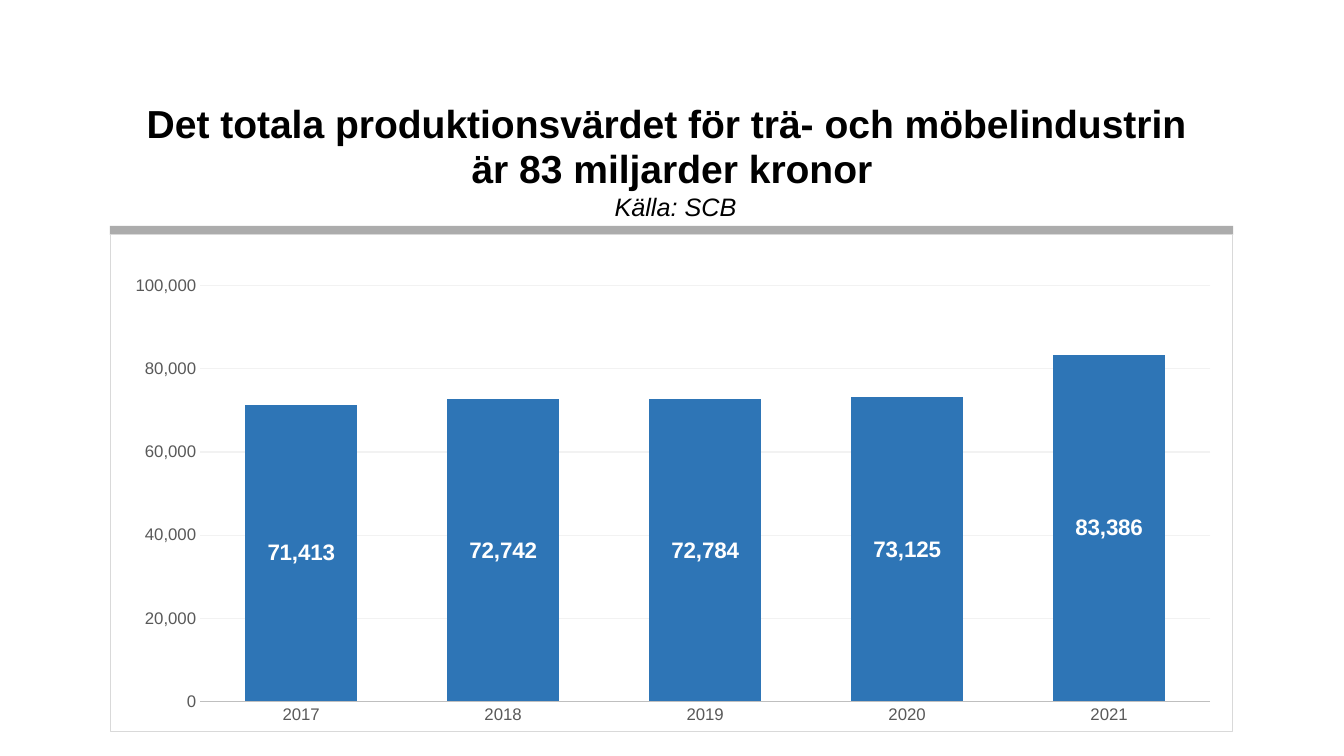
from pptx import Presentation
from pptx import util as u
from pptx.chart.data import CategoryChartData
from pptx.dml.color import RGBColor
from pptx.enum import chart as ch, shapes, text
from pptx.oxml import parse_xml
from pptx.oxml.ns import nsdecls


def rgb(value):
    return RGBColor.from_string(value)


def add_line(p, words, size=27.9, bold=False, italic=False, color="000000"):
    p.alignment = text.PP_ALIGN.CENTER
    p.line_spacing = 0.96
    r = p.add_run()
    r.text = words
    r.font.name = "Arial"
    r.font.size = u.Pt(size)
    r.font.bold = bold
    r.font.italic = italic
    r.font.color.rgb = rgb(color)


prs = Presentation()
prs.slide_width = u.Inches(13.33)
prs.slide_height = u.Inches(7.5)
s = prs.slides.add_slide(prs.slide_layouts[6])

title = s.shapes.add_textbox(u.Inches(0.95), u.Inches(1.02), u.Inches(11.43), u.Inches(1.09))
tf = title.text_frame
tf.word_wrap = True
tf.margin_left = tf.margin_right = tf.margin_top = tf.margin_bottom = 0
add_line(tf.paragraphs[0], "Det totala produktionsvärdet för trä- och möbelindustrin ", bold=True)
add_line(tf.add_paragraph(), "är 83 miljarder kronor", bold=True)
add_line(tf.add_paragraph(), " Källa: SCB", size=18, italic=True)

bar = s.shapes.add_shape(shapes.MSO_SHAPE.RECTANGLE,
                         u.Inches(1.09), u.Inches(2.24), u.Inches(11.14), u.Inches(0.09))
bar.shadow.inherit = False
bar.fill.solid()
bar.fill.fore_color.rgb = rgb("ACACAC")
bar.line.fill.background()

data = CategoryChartData(number_format="#,##0")
data.categories = ["2017", "2018", "2019", "2020", "2021"]
data.add_series("Series 1", [71413, 72742, 72784, 73125, 83386])
chart = s.shapes.add_chart(ch.XL_CHART_TYPE.COLUMN_CLUSTERED, u.Inches(1.09), u.Inches(2.32),
                           u.Inches(11.14), u.Inches(4.94), data).chart
chart.has_legend = False
chart.has_title = False
chart.font.name = "Arial"
chart.font.size = u.Pt(9)
chart.font.color.rgb = rgb("000000")

cat, val = chart.category_axis, chart.value_axis
for axis in (cat, val):
    axis.major_tick_mark = axis.minor_tick_mark = ch.XL_TICK_MARK.NONE
    axis.tick_labels.font.name = "Arial"
    axis.tick_labels.font.size = u.Pt(12)
    axis.tick_labels.font.color.rgb = rgb("595959")
cat.format.line.color.rgb = rgb("BFBFBF")
cat.format.line.width = u.Pt(1.25)
val.format.line.fill.background()
val.minimum_scale, val.maximum_scale, val.major_unit = 0, 110000, 20000
val.tick_labels.number_format = "#,##0"
val.tick_labels.number_format_is_linked = False
val.major_gridlines.format.line.color.rgb = rgb("F2F2F2")
val.major_gridlines.format.line.width = u.Pt(0.75)

plot = chart.plots[0]
plot.vary_by_categories = False
plot.gap_width = 80
plot.overlap = 25
series = plot.series[0]
series.format.fill.solid()
series.format.fill.fore_color.rgb = rgb("2E75B6")
labels = series.data_labels
labels.show_value = True
labels.position = ch.XL_LABEL_POSITION.CENTER
labels.number_format = "#,##0"
labels.number_format_is_linked = False
labels.font.name = "Arial"
labels.font.size = u.Pt(16)
labels.font.bold = True
labels.font.color.rgb = rgb("FFFFFF")

area = chart._chartSpace.chart.plotArea
for old in area.findall("{*}layout"):
    area.remove(old)
area.insert(0, parse_xml(
    f'<c:layout {nsdecls("c")}><c:manualLayout><c:layoutTarget val="inner"/>'
    '<c:xMode val="edge"/><c:yMode val="edge"/><c:x val="0.08"/><c:y val="0.02"/>'
    '<c:w val="0.9"/><c:h val="0.92"/></c:manualLayout></c:layout>'))
chart._chartSpace.chart.addnext(parse_xml(
    f'<c:spPr {nsdecls("c", "a")}><a:solidFill><a:srgbClr val="FFFFFF"/></a:solidFill>'
    '<a:ln w="9525"><a:solidFill><a:srgbClr val="D9D9D9"/></a:solidFill></a:ln></c:spPr>'))

prs.save("out.pptx")
